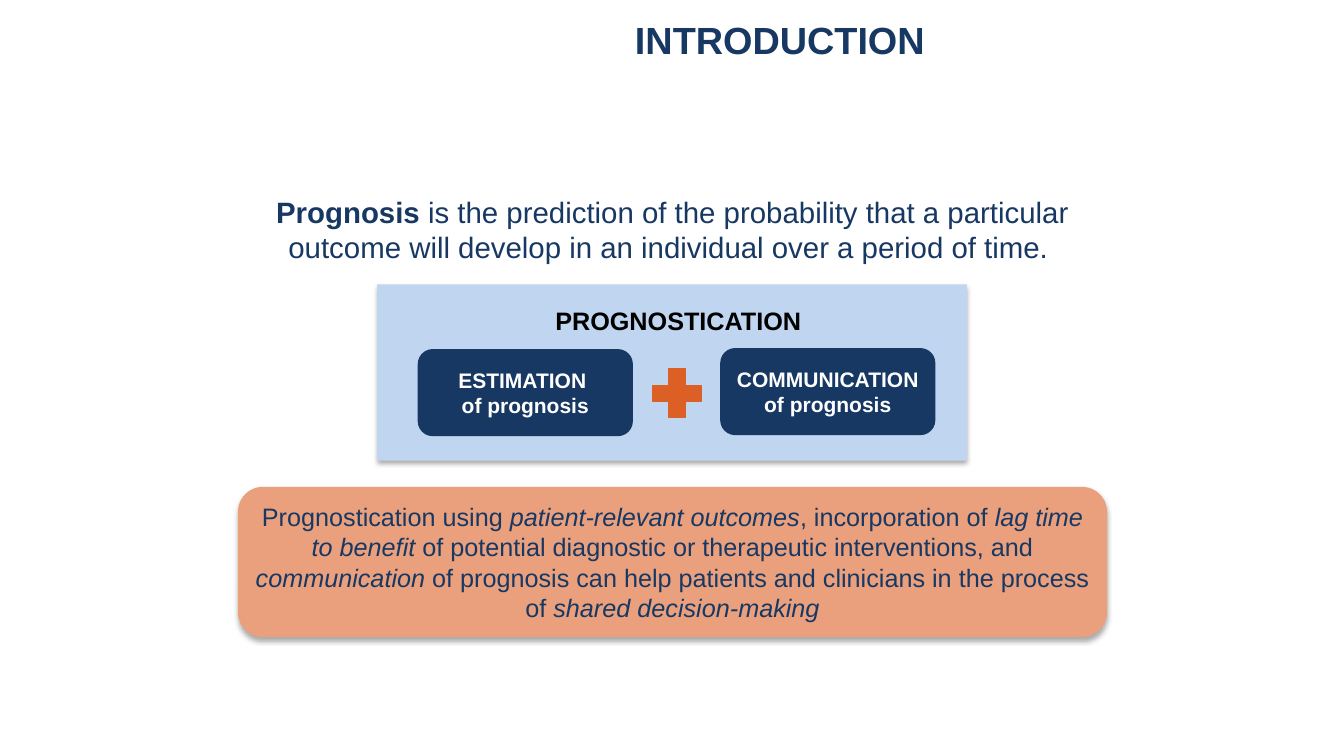
"""Build the introduction slide on prognosis and prognostication."""
from lxml import etree
from pptx import Presentation
from pptx.dml.color import RGBColor
from pptx.enum import shapes, text
from pptx.oxml import parse_xml
from pptx.util import Inches, Pt

NAVY, ORANGE, WHITE = "173863", "DC6026", "FFFFFF"
SHADOW = """<a:effectLst xmlns:a="http://schemas.openxmlformats.org/drawingml/2006/main">
<a:outerShdw blurRad="44450" dist="27940" dir="5400000" algn="ctr" rotWithShape="0">
<a:srgbClr val="000000"><a:alpha val="32000"/></a:srgbClr></a:outerShdw></a:effectLst>"""


def write(box, *lines, size, color=NAVY, bold=False, align=text.PP_ALIGN.CENTER,
          anchor=text.MSO_ANCHOR.MIDDLE, wrap=True):
    """Fill a box with lines, each a list of (words, style) pairs."""
    frame = box.text_frame
    frame.word_wrap = wrap
    frame.auto_size = text.MSO_AUTO_SIZE.NONE
    frame.vertical_anchor = anchor
    for index, line in enumerate(lines):
        para = frame.add_paragraph() if index else frame.paragraphs[0]
        para.alignment = align
        for words, style in line:
            span = para.add_run()
            span.text = words
            span.font.name = "Arial"
            span.font.size = Pt(size)
            span.font.bold = bold or style == "bold"
            span.font.italic = style == "italic"
            span.font.color.rgb = RGBColor.from_string(color)


def draw(parent, kind, left, top, width, height, fill, outlined=False, shadowed=False):
    """Add a filled shape, with an optional outline or soft shadow."""
    shape = parent.add_shape(kind, Inches(left), Inches(top), Inches(width), Inches(height))
    shape.fill.solid()
    shape.fill.fore_color.rgb = RGBColor.from_string(fill)
    if outlined:
        shape.line.color.rgb = RGBColor.from_string(fill)
        shape.line.width = Pt(1)
    else:
        shape.line.fill.background()
    if shadowed:
        shape.element.spPr.append(parse_xml(etree.tostring(etree.fromstring(SHADOW))))
    else:
        shape.shadow.inherit = False
    return shape


deck = Presentation()
deck.slide_width, deck.slide_height = Inches(13.33), Inches(7.5)
page = deck.slides.add_slide(deck.slide_layouts[5])

title = page.shapes.title
title.left, title.top = Inches(3.89), Inches(0)
title.width, title.height = Inches(7.69), Inches(0.84)
write(title, [("INTRODUCTION", "")], size=27, bold=True)
title.text_frame.paragraphs[0].line_spacing = 0.9

definition = page.shapes.add_textbox(Inches(2.36), Inches(1.78), Inches(8.62), Inches(0.99))
write(definition, [
    ("Prognosis", "bold"),
    (" is the prediction of the probability that a particular outcome will develop "
     "in an individual over a period of time. ", ""),
], size=21)
definition.text_frame.paragraphs[0].space_after = Pt(4.5)

diagram = page.shapes.add_group_shape().shapes
draw(diagram, shapes.MSO_SHAPE.RECTANGLE, 3.74, 2.82, 5.85, 1.75, "C0D5F0", shadowed=True)
for left, top, name in [(4.15, 3.47, "ESTIMATION "), (7.15, 3.46, "COMMUNICATION ")]:
    part = draw(diagram, shapes.MSO_SHAPE.ROUNDED_RECTANGLE, left, top, 2.12, 0.85, NAVY,
                outlined=True)
    write(part, [(name, "")], [("of prognosis", "")], size=15, color=WHITE, bold=True)

heading = diagram.add_textbox(Inches(5.41), Inches(2.98), Inches(2.67), Inches(0.4))
write(heading, [("PROGNOSTICATION", "")], size=18, color="000000", bold=True,
      align=text.PP_ALIGN.LEFT, anchor=text.MSO_ANCHOR.TOP, wrap=False)
heading.text_frame.auto_size = text.MSO_AUTO_SIZE.SHAPE_TO_FIT_TEXT

plus = draw(diagram, shapes.MSO_SHAPE.CROSS, 6.47, 3.66, 0.49, 0.48, ORANGE, outlined=True)
plus.adjustments[0] = 0.34

summary = draw(page.shapes, shapes.MSO_SHAPE.ROUNDED_RECTANGLE, 2.36, 4.83, 8.62, 1.49,
               "EAA07D", shadowed=True)
write(summary, [
    ("Prognostication using ", ""),
    ("patient-relevant outcomes", "italic"),
    (", incorporation of ", ""),
    ("lag time to benefit ", "italic"),
    ("of potential diagnostic or therapeutic interventions, and ", ""),
    ("communication", "italic"),
    (" of prognosis can help patients and clinicians in the process of ", ""),
    ("shared decision-making", "italic"),
], size=18)

deck.save("out.pptx")
